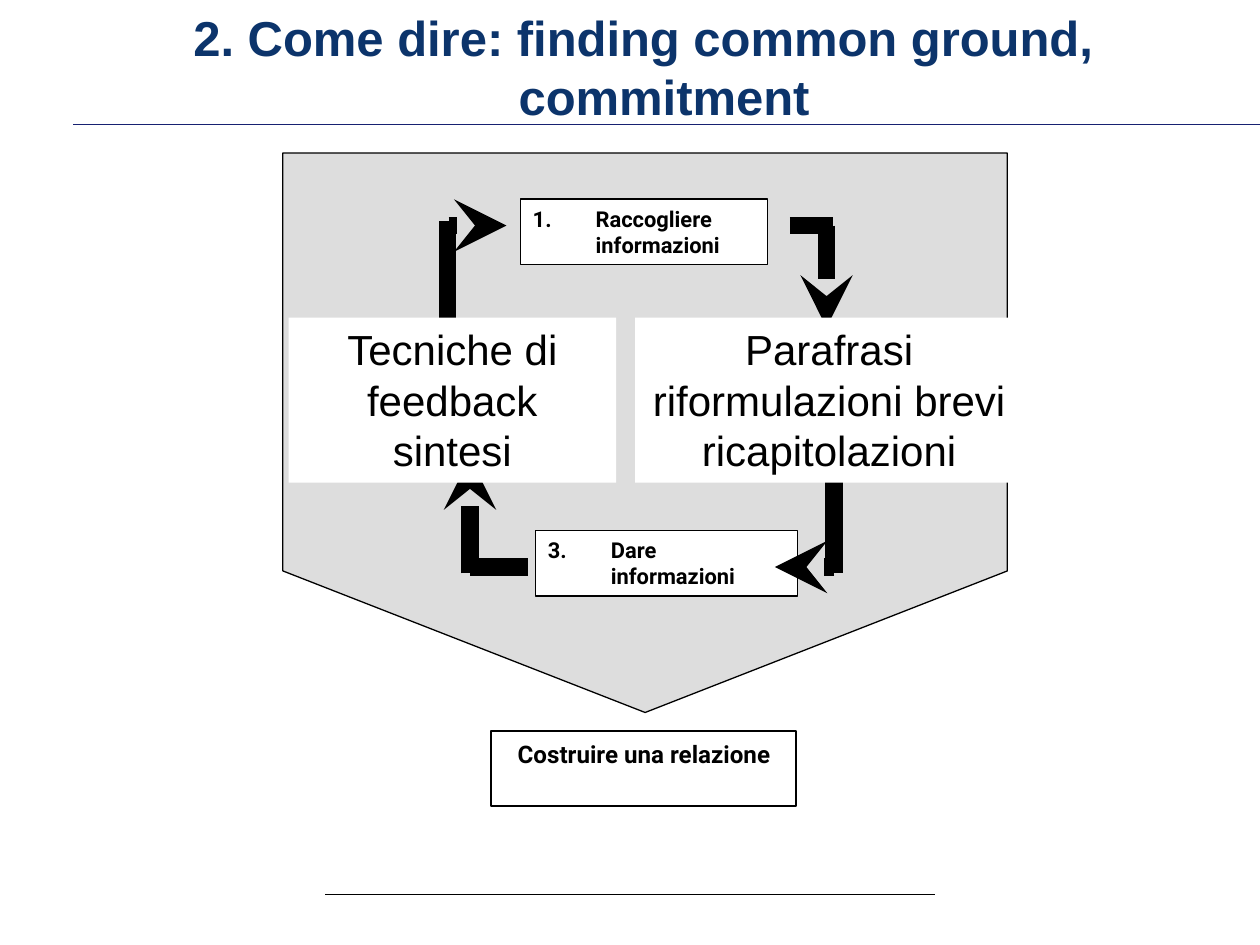
from dataclasses import dataclass

from lxml import etree
from pptx import Presentation
from pptx.dml.color import RGBColor
from pptx.enum.shapes import MSO_CONNECTOR, MSO_SHAPE
from pptx.enum.text import MSO_ANCHOR, PP_ALIGN
from pptx.oxml.ns import qn
from pptx.util import Inches, Pt

STRAIGHT = MSO_CONNECTOR.STRAIGHT
RECT, PENTAGON = MSO_SHAPE.RECTANGLE, MSO_SHAPE.PENTAGON
TOP = MSO_ANCHOR.TOP
LEFT, CENTER = PP_ALIGN.LEFT, PP_ALIGN.CENTER
COLUMNS, ROWS = 100, 75
WIDTH, HEIGHT = Inches(10), Inches(7.5)


@dataclass(frozen=True)
class Theme:
    """Colours, line widths and text formats."""
    navy = RGBColor(0x17, 0x21, 0x71)
    black = RGBColor(0, 0, 0)
    white = RGBColor(255, 255, 255)
    grey = RGBColor(0xDD, 0xDD, 0xDD)
    thin, medium, thick = 0.75, 1.25, 10
    title = {"name": "Arial", "size": Pt(28), "bold": True, "color": RGBColor(0x0C, 0x34, 0x6B)}
    step = {"name": "Roboto", "size": Pt(12.5), "bold": True, "color": black}
    goal = {"name": "Roboto", "size": Pt(13.8), "bold": True, "color": black}
    technique = {"name": "Arial", "size": Pt(24), "bold": False, "color": black}


THEME = Theme()


def x(columns):
    """Convert grid columns to a length."""
    return round(columns * WIDTH / COLUMNS)


def y(rows):
    """Convert grid rows to a length."""
    return round(rows * HEIGHT / ROWS)


def place(box, left, top, width, height):
    """Return a part's frame, given relative to its region."""
    return x(box[0] + left), y(box[1] + top), x(width), y(height)


def add_line(slide, box, start, end, color, width, arrow=False):
    """Draw a line inside a region, with an optional arrowhead at its end."""
    (x1, y1), (x2, y2) = ((x(box[0] + a), y(box[1] + b)) for a, b in (start, end))
    c = slide.shapes.add_connector(STRAIGHT, x1, y1, x2, y2)
    c.line.color.rgb = color
    c.line.width = Pt(width)
    if arrow:
        etree.SubElement(c.line._get_or_add_ln(), qn("a:tailEnd"), type="stealth")
    etree.SubElement(c._element.spPr, qn("a:effectLst"))


def add_box(slide, frame, kind=RECT, fill=None, border=None):
    """Add a plain shape with optional fill and border width."""
    sp = slide.shapes.add_shape(kind, *frame)
    sp.shadow.inherit = False
    if fill is None:
        sp.fill.background()
    else:
        sp.fill.solid()
        sp.fill.fore_color.rgb = fill
    if border is None:
        sp.line.fill.background()
    else:
        sp.line.color.rgb = THEME.black
        sp.line.width = Pt(border)
    return sp


def write(sp, lines, style, align=CENTER, inset=0.05, number=None, margins=()):
    """Write paragraphs with one format, optionally numbered or with margins."""
    tf = sp.text_frame
    tf.word_wrap = True
    tf.vertical_anchor = TOP
    tf.margin_top = tf.margin_bottom = Inches(inset)
    for i, line in enumerate(lines):
        p = tf.paragraphs[0] if i == 0 else tf.add_paragraph()
        p.alignment = align
        pPr = p._p.get_or_add_pPr()
        if margins:
            side, size = margins[i]
            pPr.set(side, str(x(size)))
        if number:
            pPr.set("marL", str(x(5)))
            pPr.set("indent", str(-x(5)))
            etree.SubElement(pPr, qn("a:buAutoNum"), type="arabicPeriod", startAt=str(number))
        r = p.add_run()
        r.text = line
        for key, value in style.items():
            if key == "color":
                r.font.color.rgb = value
            else:
                setattr(r.font, key, value)


def add_title(slide, box):
    """Add the heading and the rule beneath it."""
    add_line(slide, box, (-0.1, 9.8), (94.1, 9.8), THEME.navy, THEME.thin)
    tb = slide.shapes.add_textbox(*place(box, 0, 0, *box[2:]))
    write(tb, ["2. Come dire: finding common ground,", "commitment"], THEME.title,
          margins=[("marR", 2.2), ("marL", 3.3)])


def add_cycle(slide, box):
    """Add the downward plate with its cycle of steps and techniques."""
    width, height = box[2:]
    plate = add_box(slide, place(box, (width - height) / 2, (height - width) / 2, height, width),
                    PENTAGON, THEME.grey, THEME.thin)
    plate.rotation = 90
    plate.adjustments[0] = 0.253

    steps = [(1, "Raccogliere informazioni", (18.85, 3.65, 19.6, 5.2)),
             (3, "Dare informazioni", (20.05, 29.95, 20.8, 5.2))]
    for number, text, frame in steps:
        sp = add_box(slide, place(box, *frame), fill=THEME.white, border=THEME.thin)
        write(sp, [text], THEME.step, LEFT, number=number)

    upper, lower, foot = 5.75, 32.85, 33.35
    bars = [((43.15, upper), (43.15, 13.85), True), ((40.25, upper), (43.65, upper), False),
            ((43.75, 25.35), (43.75, foot), False), ((43.75, lower), (39.05, lower), True),
            ((14.85, lower), (19.45, lower), False), ((14.85, foot), (14.85, 24.15), True),
            ((13.15, upper), (17.75, upper), True), ((13.05, 5.35), (13.05, 13.25), False)]
    for start, end, arrow in bars:
        add_line(slide, box, start, end, THEME.black, THEME.thick, arrow)

    techniques = [(27.95, 30.8, ["Parafrasi riformulazioni brevi ricapitolazioni"]),
                  (0.45, 26, ["Tecniche di feedback", "sintesi"])]
    for left, span, lines in techniques:
        sp = add_box(slide, place(box, left, 13.05, span, 13.1), fill=THEME.white)
        write(sp, lines, THEME.technique)


def add_goal(slide, box):
    """Add the goal reached by the cycle."""
    sp = add_box(slide, place(box, 0, 0, *box[2:]), border=THEME.medium)
    write(sp, ["Costruire una relazione"], THEME.goal, inset=0.07)


def add_footer(slide, box):
    """Add the closing rule."""
    add_line(slide, box, (0, 0), (box[2], 0), THEME.black, THEME.thin)


def main():
    """Build and save the slide."""
    prs = Presentation()
    prs.slide_width, prs.slide_height = WIDTH, HEIGHT
    s = prs.slides.add_slide(prs.slide_layouts[6])
    add_title(s, (5.9, 0.1, 92.5, 10.4))
    add_cycle(s, (22.45, 12.15, 57.5, 44.4))
    add_goal(s, (39, 58, 24.2, 6))
    add_footer(s, (25.8, 71, 48.4, 0))
    prs.save("out.pptx")


if __name__ == "__main__":
    main()
